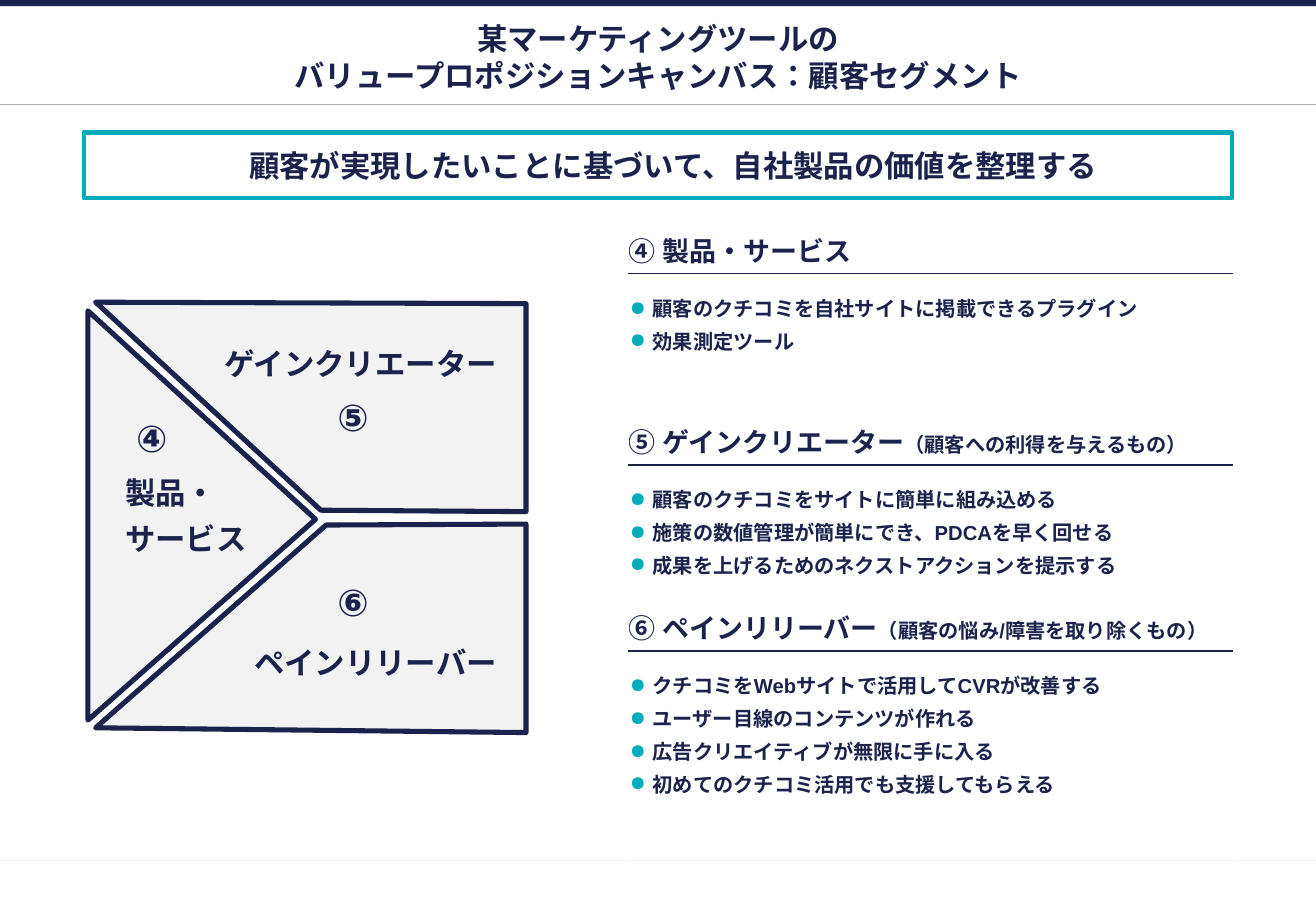
"""Build the value proposition canvas slide with its table of details."""
from lxml.etree import SubElement
from pptx import Presentation
from pptx.dml.color import RGBColor
from pptx.enum.lang import MSO_LANGUAGE_ID as LANG
from pptx.enum.shapes import MSO_CONNECTOR as CONN, MSO_SHAPE as SHAPE
from pptx.enum.text import MSO_ANCHOR as ANCHOR, MSO_AUTO_SIZE as AUTO, PP_ALIGN as ALIGN
from pptx.oxml.ns import qn
from pptx.util import Cm, Pt

NAVY, TEAL, GRAY, WHITE = "1B224C", "00ACBA", "F2F2F2", "FFFFFF"


def rgb(value):
    return RGBColor.from_string(value)


def style(p, size, align=ALIGN.LEFT):
    p.alignment = align
    for r in p.runs:
        r.font.name, r.font.size, r.font.bold = "Arial", Pt(size), True
        r.font.color.rgb = rgb(NAVY)
        r.font.language_id = LANG.JAPANESE
        SubElement(r.font._element, qn("a:ea"), typeface="Arial")


prs = Presentation()
prs.slide_width, prs.slide_height = Cm(27.52), Cm(19.05)
s = prs.slides.add_slide(prs.slide_layouts[5])

for y, color in [(18, GRAY), (2.19, "AFAFAF")]:
    line = s.shapes.add_connector(CONN.STRAIGHT, 0, Cm(y), prs.slide_width, Cm(y))
    line.line.color.rgb, line.line.width = rgb(color), Pt(0.75)
    SubElement(line._element.spPr, qn("a:effectLst"))

bar = s.shapes.add_shape(SHAPE.RECTANGLE, 0, 0, prs.slide_width, Cm(0.13))
bar.shadow.inherit = False
bar.fill.solid()
bar.fill.fore_color.rgb = rgb(NAVY)
bar.line.fill.background()

title = s.shapes.title
title.left, title.top, title.width, title.height = Cm(1.75), Cm(0.65), Cm(24.02), Cm(1.08)
tf = title.text_frame
tf.text = "某マーケティングツールの\vバリュープロポジションキャンバス：顧客セグメント"
tf.auto_size, tf.vertical_anchor = AUTO.NONE, ANCHOR.MIDDLE
tf.margin_left = tf.margin_right = tf.margin_top = tf.margin_bottom = Cm(0.1)
style(tf.paragraphs[0], 18, ALIGN.CENTER)

banner = s.shapes.add_shape(SHAPE.RECTANGLE, Cm(1.75), Cm(2.77), Cm(24.02), Cm(1.38))
banner.shadow.inherit = False
banner.fill.solid()
banner.fill.fore_color.rgb = rgb(WHITE)
banner.line.color.rgb, banner.line.width = rgb(TEAL), Pt(2.5)
tf = banner.text_frame
tf.text = "顧客が実現したいことに基づいて、自社製品の価値を整理する"
tf.vertical_anchor = ANCHOR.TOP
tf.margin_left = tf.margin_right = Cm(0.4)
tf.margin_top = tf.margin_bottom = Cm(0.3)
style(tf.paragraphs[0], 18, ALIGN.CENTER)
pPr = tf.paragraphs[0]._p.get_or_add_pPr()
pPr.set("marL", str(Cm(1.27)))
pPr.set("indent", str(Cm(-0.64)))

sections = [
    ("④ 製品・サービス", "", 1.06, 2.94, [
        "顧客のクチコミを自社サイトに掲載できるプラグイン",
        "効果測定ツール"]),
    ("⑤ ゲインクリエーター", "（顧客への利得を与えるもの）", 1.06, 2.45, [
        "顧客のクチコミをサイトに簡単に組み込める",
        "施策の数値管理が簡単にでき、PDCAを早く回せる",
        "成果を上げるためのネクストアクションを提示する"]),
    ("⑥ ペインリリーバー", "（顧客の悩み/障害を取り除くもの）", 1.44, 4.83, [
        "クチコミをWebサイトで活用してCVRが改善する",
        "ユーザー目線のコンテンツが作れる",
        "広告クリエイティブが無限に手に入る",
        "初めてのクチコミ活用でも支援してもらえる"]),
]
table = s.shapes.add_table(6, 1, Cm(13.14), Cm(4.66), Cm(12.63), Cm(13.78)).table
table.first_row = table.horz_banding = False
for i, (name, note, head_height, body_height, items) in enumerate(sections):
    head, body = table.cell(2 * i, 0), table.cell(2 * i + 1, 0)
    table.rows[2 * i].height, table.rows[2 * i + 1].height = Cm(head_height), Cm(body_height)

    head.vertical_anchor = ANCHOR.BOTTOM
    head.margin_left = head.margin_right = 0
    head.margin_top = head.margin_bottom = Cm(0.13)
    p = head.text_frame.paragraphs[0]
    p.text = name
    if note:
        p.add_run().text = note
    style(p, 16)
    for r in p.runs[1:]:
        r.font.size = Pt(12)

    body.margin_left = body.margin_right = body.margin_bottom = 0
    body.margin_top = Cm(0.51)
    body.text_frame.text = "\n".join(items)
    for j, p in enumerate(body.text_frame.paragraphs):
        pPr = p._p.get_or_add_pPr()
        pPr.set("marL", str(Cm(0.51)))
        pPr.set("indent", str(Cm(-0.48)))
        if j:
            p.space_before = Pt(6)
        SubElement(SubElement(pPr, qn("a:buClr")), qn("a:srgbClr"), val=TEAL)
        SubElement(pPr, qn("a:buChar"), char="●")
        style(p, 12)

    for cell, edge in [(head, "a:lnB"), (body, "a:lnT")]:
        ln = SubElement(cell._tc.get_or_add_tcPr(), qn(edge), w=str(Pt(1)))
        SubElement(SubElement(ln, qn("a:solidFill")), qn("a:srgbClr"), val=NAVY)
        cell.fill.background()

canvas = s.shapes.add_group_shape()
areas = [
    ([(6.71, 10.67), (2, 6.32), (11, 6.35), (11, 10.7)],
     "ゲインクリエーター", ANCHOR.TOP, ALIGN.RIGHT, (0, 0.89, 0.61, 0)),
    ([(2, 15.22), (6.82, 10.98), (11, 10.96), (11, 15.32)],
     "ペインリリーバー", ANCHOR.BOTTOM, ALIGN.RIGHT, (0, 0.3, 0.61, 1.09)),
    ([(1.84, 6.5), (1.84, 15.06), (6.6, 10.86)],
     "製品・\nサービス", ANCHOR.MIDDLE, ALIGN.LEFT, (0.78, 0, 0, 0)),
]
for points, text, anchor, align, margins in areas:
    start, *rest = [(Cm(x), Cm(y)) for x, y in points]
    builder = canvas.shapes.build_freeform(*start)
    builder.add_line_segments(rest, close=True)
    sp = builder.convert_to_shape()
    sp.shadow.inherit = False
    sp.fill.solid()
    sp.fill.fore_color.rgb = rgb(GRAY)
    sp.line.color.rgb, sp.line.width = rgb(NAVY), Pt(3)
    tf = sp.text_frame
    tf.text, tf.word_wrap, tf.vertical_anchor = text, True, anchor
    tf.margin_left, tf.margin_top, tf.margin_right, tf.margin_bottom = map(Cm, margins)
    for p in tf.paragraphs:
        style(p, 18, align)
    for p in tf.paragraphs[1:]:
        p.space_before = Pt(6)

for number, x, y in [("④", 2.54, 8.65), ("⑤", 6.75, 8.21), ("⑥", 6.75, 12.07)]:
    tf = canvas.shapes.add_textbox(Cm(x), Cm(y), Cm(1.27), Cm(1.01)).text_frame
    tf.text, tf.word_wrap, tf.vertical_anchor = number, True, ANCHOR.MIDDLE
    tf.margin_left = tf.margin_top = tf.margin_right = tf.margin_bottom = 0
    style(tf.paragraphs[0], 22, ALIGN.CENTER)

prs.save("out.pptx")
